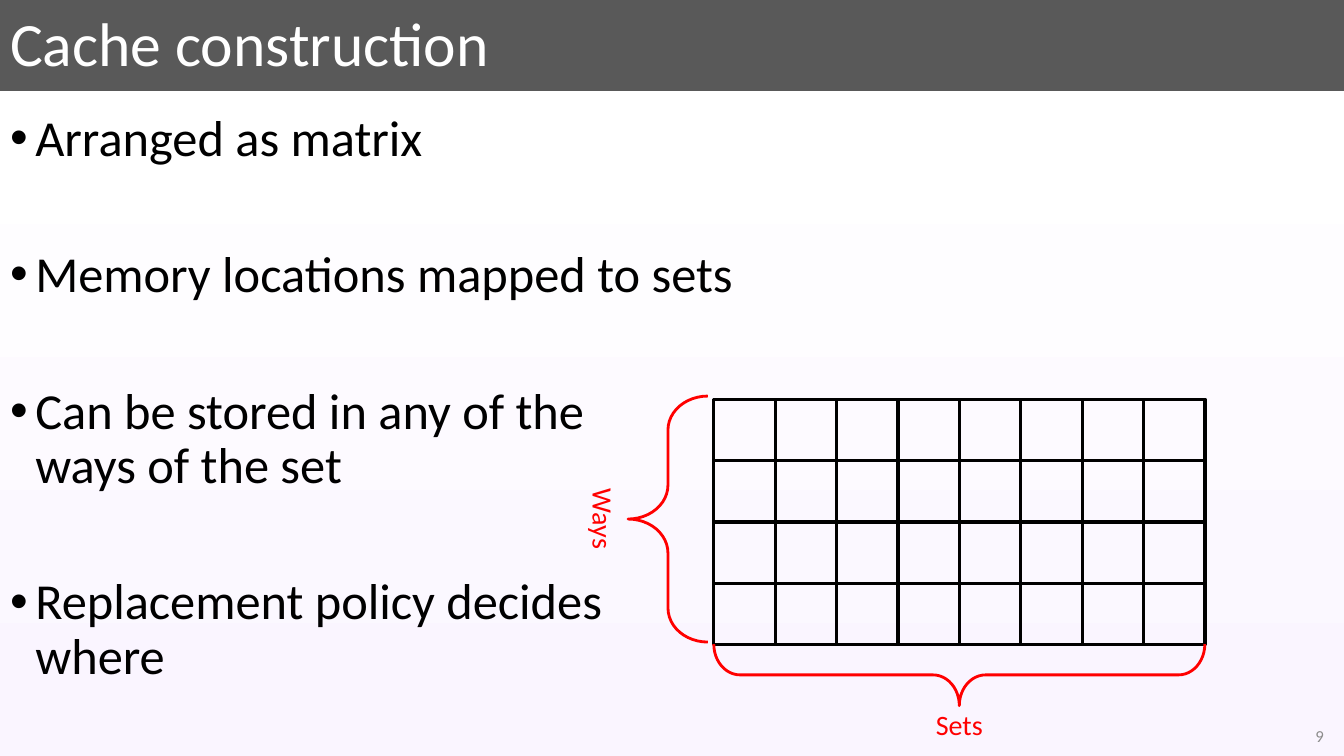
from lxml.etree import SubElement
from pptx import Presentation
from pptx.dml.color import RGBColor
from pptx.enum.shapes import MSO_SHAPE
from pptx.enum.text import MSO_ANCHOR, MSO_AUTO_SIZE, PP_ALIGN
from pptx.oxml.ns import qn
from pptx.util import Inches, Pt

HUES = {"bar": "595959", "white": "FFFFFF", "tint": "FAF5FF",
        "black": "000000", "red": "FF0000", "gray": "8C8C8C"}


def write(para, text, size, hue, align=PP_ALIGN.LEFT, line=1.0, before=0):
    para.text = text
    para.alignment = align
    para.line_spacing = line
    para.space_before = Pt(before)
    for run in para.runs:
        run.font.name = "Calibri"
        run.font.size = Pt(size)
        run.font.color.rgb = RGBColor.from_string(HUES[hue])


def place(shape, left, top, width, height):
    shape.left, shape.top = Inches(left), Inches(top)
    shape.width, shape.height = Inches(width), Inches(height)


deck = Presentation()
deck.slide_width, deck.slide_height = Inches(13.33), Inches(7.5)
slide = deck.slides.add_slide(deck.slide_layouts[1])
shapes = slide.shapes

fill = slide.background.fill
fill.gradient()
fill.gradient_angle = 270
stops = next(slide.element.iter(qn("a:gsLst")))
for stop in list(stops):
    stops.remove(stop)
for percent, hue in [(0, "bar"), (12, "bar"), (12, "white"), (100, "tint")]:
    stop = SubElement(stops, qn("a:gs"), pos=str(percent * 1000))
    SubElement(stop, qn("a:srgbClr"), val=HUES[hue])

title = shapes.title
place(title, 0, 0, 13.23, 0.92)
title.text_frame.auto_size = MSO_AUTO_SIZE.NONE
title.text_frame.vertical_anchor = MSO_ANCHOR.MIDDLE
write(title.text_frame.paragraphs[0], "Cache construction", 44, "white", line=0.9)

body = slide.placeholders[1]
place(body, 0, 1.07, 13.33, 6.43)
frame = body.text_frame
frame.auto_size = MSO_AUTO_SIZE.NONE
frame.vertical_anchor = MSO_ANCHOR.TOP
points = ["Arranged as matrix", "Memory locations mapped to sets",
          "Can be stored in any of the \vways of the set",
          "Replacement policy decides\vwhere"]
for i, point in enumerate(points):
    para = frame.add_paragraph() if i else frame.paragraphs[0]
    props = para._p.get_or_add_pPr()
    props.set("marL", str(Inches(0.25)))
    props.set("indent", str(Inches(-0.25)))
    SubElement(props, qn("a:buFont"), typeface="Arial")
    SubElement(props, qn("a:buChar"), char="•")
    write(para, point, 36, "black", line=0.9, before=58.5 if i else 0)

side = 0.61
for row in range(4):
    for col in range(8):
        cell = shapes.add_shape(
            MSO_SHAPE.RECTANGLE, Inches(7.08 + col * side * 0.998),
            Inches(3.96 + row * side * 0.998), Inches(side), Inches(side))
        cell.shadow.inherit = False
        cell.fill.background()
        cell.line.color.rgb = RGBColor.from_string(HUES["black"])
        cell.line.width = Pt(2.25)

for left, top, width, height, turn in [(9.21, 4.26, 0.61, 4.87, 270),
                                       (6.23, 3.93, 0.79, 2.44, 0)]:
    brace = shapes.add_shape(MSO_SHAPE.LEFT_BRACE, Inches(left), Inches(top),
                             Inches(width), Inches(height))
    brace.rotation = turn
    brace.adjustments[0] = 0.427
    brace.shadow.inherit = False
    brace.fill.background()
    brace.line.color.rgb = RGBColor.from_string(HUES["red"])
    brace.line.width = Pt(2)

labels = [("Sets", 9.18, 6.97, 0.67, 0.44, 0, 20, "red", PP_ALIGN.CENTER),
          ("Ways", 5.58, 4.93, 0.82, 0.44, 90, 20, "red", PP_ALIGN.CENTER),
          ("9", 10.23, 7.1, 3, 0.4, 0, 12, "gray", PP_ALIGN.RIGHT)]
for text, left, top, width, height, turn, size, hue, align in labels:
    label = shapes.add_textbox(Inches(left), Inches(top),
                               Inches(width), Inches(height))
    label.rotation = turn
    label.text_frame.word_wrap = False
    label.text_frame.vertical_anchor = MSO_ANCHOR.MIDDLE
    write(label.text_frame.paragraphs[0], text, size, hue, align=align)

deck.save("out.pptx")
